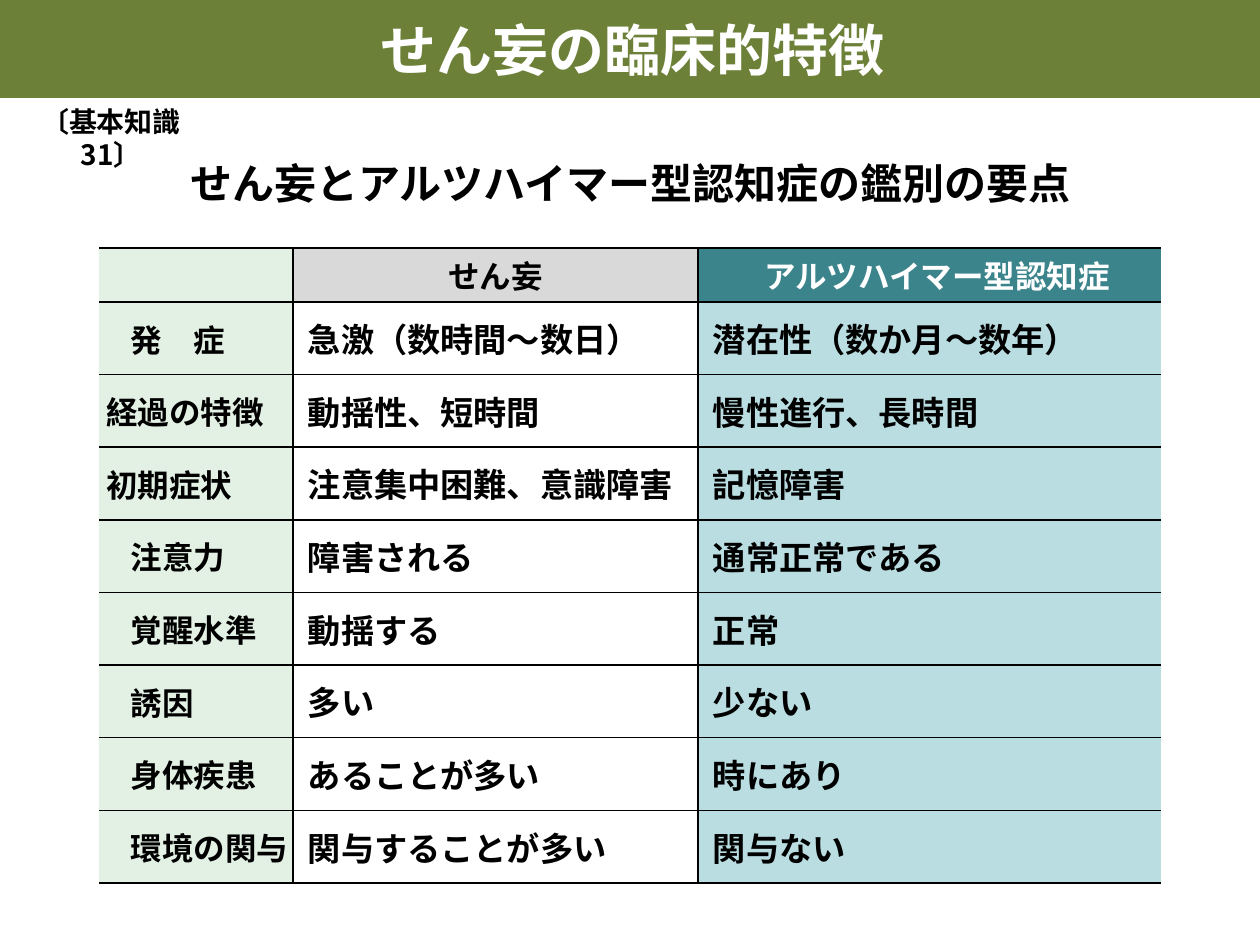
from lxml import etree
from pptx import Presentation
from pptx import util as u
from pptx.dml.color import RGBColor
from pptx.enum import shapes, text
from pptx.oxml.ns import qn

PX = 914400 / 126
FONT = "Noto Sans CJK JP"
HUES = {"band": "6D8038", "white": "FFFFFF", "black": "000000",
        "label": "E3F1E4", "gray": "D9D9D9", "teal": "3C848C", "pale": "BADDE1"}
MID, LEFT = text.PP_ALIGN.CENTER, text.PP_ALIGN.LEFT


def px(*nums):
    return [u.Emu(round(n * PX)) for n in nums]


def write(frame, words, size, hue="black", align=MID):
    para = frame.paragraphs[0]
    para.alignment = align
    run = para.add_run()
    run.text = words
    font = run.font
    font.name, font.size, font.bold = FONT, u.Pt(size), True
    font.color.rgb = RGBColor.from_string(HUES[hue])
    # East Asian glyphs take their typeface from a:ea
    etree.SubElement(font._element, qn("a:ea"), typeface=FONT)


deck = Presentation()
deck.slide_width, deck.slide_height = px(1260, 945)
slide = deck.slides.add_slide(deck.slide_layouts[5])

# Title on its band
band = slide.shapes.add_shape(shapes.MSO_SHAPE.RECTANGLE, *px(0, 0, 1260, 98))
band.shadow.inherit = False
band.fill.solid()
band.fill.fore_color.rgb = RGBColor.from_string(HUES["band"])
band.line.fill.background()
slide.shapes._spTree.insert(2, band._element)

title = slide.shapes.title
title.left, title.top, title.width, title.height = px(123, 9, 1033, 81)
lead = slide.shapes.add_textbox(*px(28, 147, 1205, 72))
for box, words, size, hue in ((title, "せん妄の臨床的特徴 ", 32, "white"),
                              (lead, "せん妄とアルツハイマー型認知症の鑑別の要点", 24, "black")):
    frame = box.text_frame
    frame.auto_size = text.MSO_AUTO_SIZE.NONE
    frame.word_wrap = False
    frame.vertical_anchor = text.MSO_ANCHOR.MIDDLE
    write(frame, words, size, hue)

note = slide.shapes.add_textbox(*px(0, 98, 222, 47)).text_frame
note.word_wrap = True
write(note, "〔基本知識 31〕", 16)

# Comparison table
rows = [
    ("", "せん妄", "アルツハイマー型認知症"),
    ("　発　症", "急激（数時間～数日）", "潜在性（数か月～数年）"),
    (" 経過の特徴", "動揺性、短時間", "慢性進行、長時間"),
    (" 初期症状", "注意集中困難、意識障害", "記憶障害"),
    ("　注意力", "障害される", "通常正常である"),
    ("　覚醒水準", "動揺する", "正常"),
    ("　誘因", "多い", "少ない"),
    ("　身体疾患", "あることが多い", "時にあり"),
    ("　環境の関与", "関与することが多い", "関与ない"),
]
HEAD, BODY = 54, 581
table = slide.shapes.add_table(len(rows), 3, *px(99, 248, 1062, HEAD + BODY)).table
for col, wide in zip(table.columns, px(194, 405, 463)):
    col.width = wide

for r, row in enumerate(rows):
    table.rows[r].height = px(BODY / (len(rows) - 1) if r else HEAD)[0]
    fills = ("label", "white", "pale") if r else ("label", "gray", "teal")
    for c, words in enumerate(row):
        cell = table.cell(r, c)
        cell.fill.solid()
        cell.fill.fore_color.rgb = RGBColor.from_string(HUES[fills[c]])
        cell.vertical_anchor = text.MSO_ANCHOR.MIDDLE
        cell.margin_right = cell.margin_top = cell.margin_bottom = 0
        cell.margin_left = px(15 if c == 2 or (r and c) else 0)[0]
        if words:
            write(cell.text_frame, words, 19 if r and c else 18,
                  "black" if r or c < 2 else "white", LEFT if r else MID)
        # The outer left and right edges stay open
        edges = {"L": c > 0, "R": c < 2, "T": True, "B": True}
        for i, (side, drawn) in enumerate(edges.items()):
            line = etree.Element(qn("a:ln" + side), w=str(u.Pt(1)))
            if drawn:
                paint = etree.SubElement(line, qn("a:solidFill"))
                etree.SubElement(paint, qn("a:srgbClr"), val=HUES["black"])
            else:
                etree.SubElement(line, qn("a:noFill"))
            cell._tc.tcPr.insert(i, line)

deck.save("out.pptx")
